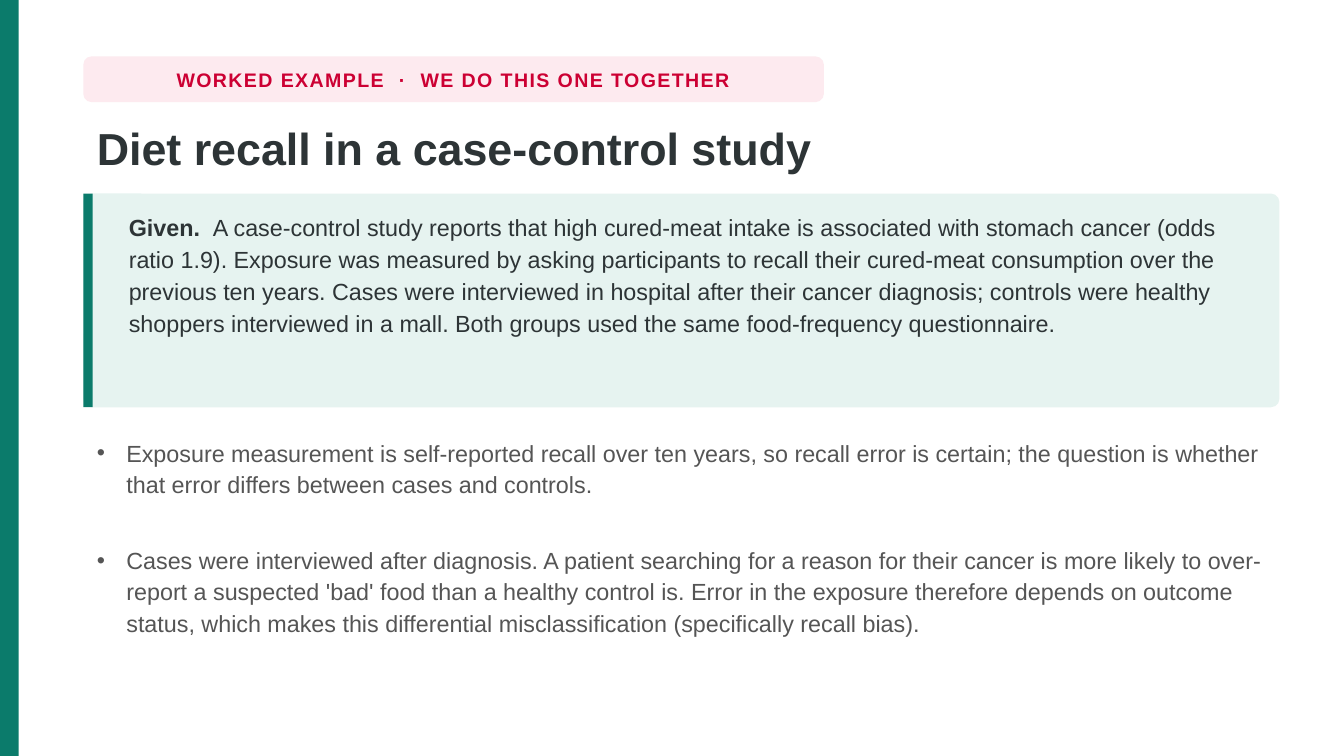
import pptx
import pptx.util
from lxml import etree
from pptx.dml.color import RGBColor
from pptx.enum.shapes import MSO_SHAPE
from pptx.enum.text import MSO_ANCHOR, MSO_AUTO_SIZE, PP_ALIGN
from pptx.oxml.ns import qn

Inches = pptx.util.Inches

GREEN = RGBColor(0x0B, 0x7B, 0x6B)
MINT = RGBColor(0xE6, 0xF3, 0xF0)
PINK = RGBColor(0xFD, 0xEA, 0xEF)
RED = RGBColor(0xCC, 0x00, 0x33)
INK = RGBColor(0x2D, 0x34, 0x36)
GREY = RGBColor(0x55, 0x55, 0x55)

LEFT, WIDTH = Inches(0.62), Inches(8.9)
CARD_TOP, CARD_HEIGHT = Inches(1.44), Inches(1.59)


def write(paragraph, text, size=12.5, color=INK, bold=False, tracking=None):
    """Add a formatted run to the paragraph; tracking is in points."""
    run = paragraph.add_run()
    run.text = text
    run.font.name = "Arial"
    run.font.size = pptx.util.Pt(size)
    run.font.bold = bold
    run.font.color.rgb = color
    if tracking:
        run.font._element.set("spc", str(round(tracking * 100)))


def add_panel(left, top, width, height, color, radius=None):
    """Add a filled rectangle, rounded when a radius ratio is given."""
    kind = MSO_SHAPE.RECTANGLE if radius is None else MSO_SHAPE.ROUNDED_RECTANGLE
    panel = slide.shapes.add_shape(kind, left, top, width, height)
    if radius is not None:
        panel.adjustments[0] = radius
    panel.shadow.inherit = False
    panel.fill.solid()
    panel.fill.fore_color.rgb = color
    panel.line.fill.background()
    return panel


prs = pptx.Presentation()
prs.slide_width = Inches(10)
prs.slide_height = prs.slide_width * 9 // 16
slide = prs.slides.add_slide(prs.slide_layouts[1])

# Edge stripe and label
add_panel(0, 0, Inches(0.14), prs.slide_height, GREEN)
label = add_panel(LEFT, Inches(0.42), Inches(5.51), Inches(0.34), PINK, radius=0.18)
label.text_frame.vertical_anchor = MSO_ANCHOR.MIDDLE
label.text_frame.word_wrap = False
label_line = label.text_frame.paragraphs[0]
label_line.alignment = PP_ALIGN.CENTER
write(label_line, "WORKED EXAMPLE  ·  WE DO THIS ONE TOGETHER",
      size=10.5, color=RED, bold=True, tracking=0.8)

# Title
title = slide.shapes.title
title.left, title.top, title.width, title.height = LEFT, Inches(0.84), WIDTH, Inches(0.56)
title.text_frame.auto_size = MSO_AUTO_SIZE.NONE
title.text_frame.vertical_anchor = MSO_ANCHOR.TOP
heading = title.text_frame.paragraphs[0]
heading.alignment = PP_ALIGN.LEFT
heading.line_spacing = 1.02
write(heading, "Diet recall in a case-control study", size=24, bold=True)

# Given card
card = add_panel(LEFT, CARD_TOP, WIDTH, CARD_HEIGHT, MINT, radius=0.04)
add_panel(LEFT, CARD_TOP, Inches(0.07), CARD_HEIGHT, GREEN)
given = card.text_frame
given.word_wrap = True
given.vertical_anchor = MSO_ANCHOR.TOP
given.margin_left, given.margin_right = Inches(0.32), Inches(0.34)
given.margin_top = Inches(0.1)
case = given.paragraphs[0]
case.alignment = PP_ALIGN.LEFT
case.line_spacing = 1.14
write(case, "Given.  ", bold=True)
write(case, "A case-control study reports that high cured-meat intake is associated with "
            "stomach cancer (odds ratio 1.9). Exposure was measured by asking participants "
            "to recall their cured-meat consumption over the previous ten years. Cases were "
            "interviewed in hospital after their cancer diagnosis; controls were healthy "
            "shoppers interviewed in a mall. Both groups used the same food-frequency "
            "questionnaire.")

# Reasoning steps
STEPS = [
    "Exposure measurement is self-reported recall over ten years, so recall error is "
    "certain; the question is whether that error differs between cases and controls.",
    "Cases were interviewed after diagnosis. A patient searching for a reason for their "
    "cancer is more likely to over-report a suspected 'bad' food than a healthy control "
    "is. Error in the exposure therefore depends on outcome status, which makes this "
    "differential misclassification (specifically recall bias).",
]
body = slide.placeholders[1]
body.left, body.top, body.width, body.height = LEFT, Inches(3.19), WIDTH, Inches(1.96)
body.text_frame.auto_size = MSO_AUTO_SIZE.NONE
for i, step in enumerate(STEPS):
    item = body.text_frame.add_paragraph() if i else body.text_frame.paragraphs[0]
    item.line_spacing = 1.12
    item.space_before = pptx.util.Pt(24 if i else 0)
    properties = item._p.get_or_add_pPr()
    properties.set("marL", str(Inches(0.22)))
    properties.set("indent", str(-Inches(0.22)))
    etree.SubElement(properties, qn("a:buChar")).set("char", "•")
    write(item, step, color=GREY)

prs.save("out.pptx")
